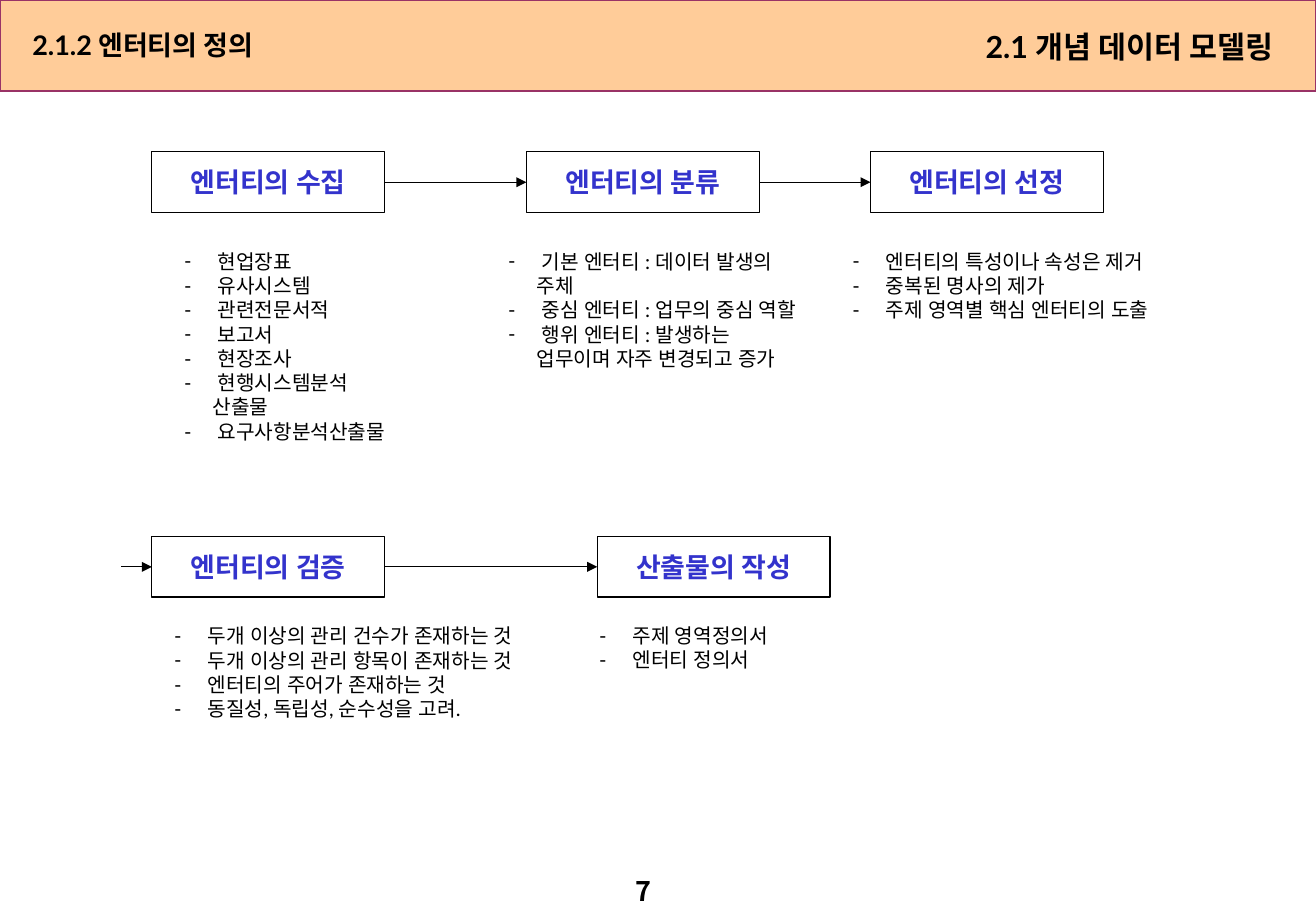
"""Build the slide on defining entities: five linked steps, each with its list."""
from dataclasses import dataclass

from lxml.etree import SubElement
from pptx import Presentation
from pptx.dml.color import RGBColor
from pptx.enum.shapes import MSO_CONNECTOR, MSO_SHAPE
from pptx.enum.text import MSO_ANCHOR, MSO_AUTO_SIZE, PP_ALIGN
from pptx.oxml.ns import qn
from pptx.util import Emu, Pt

HEADING = "2.1.2 엔터티의 정의"
CHAPTER = "2.1 개념 데이터 모델링"
PAGE_NUMBER = "7"

STEPS = [
    dict(name="엔터티의 수집", corner=(150, 150), notes_at=(170, 240, 240, 204), notes=[
        "현업장표", "유사시스템", "관련전문서적", "보고서", "현장조사",
        "현행시스템분석 산출물", "요구사항분석산출물"]),
    dict(name="엔터티의 분류", corner=(520, 150), notes_at=(490, 240, 310, 156), notes=[
        "기본 엔터티 : 데이터 발생의 주체",
        "중심 엔터티 : 업무의 중심 역할",
        "행위 엔터티 : 발생하는 업무이며 자주 변경되고 증가"]),
    dict(name="엔터티의 선정", corner=(860, 150), notes_at=(830, 240, 360, 108), notes=[
        "엔터티의 특성이나 속성은 제거", "중복된 명사의 제가",
        "주제 영역별 핵심 엔터티의 도출"]),
    dict(name="엔터티의 검증", corner=(150, 530), notes_at=(160, 610, 360, 156), notes=[
        "두개 이상의 관리 건수가 존재하는 것",
        "두개 이상의 관리 항목이 존재하는 것",
        "엔터티의 주어가 존재하는 것",
        "동질성, 독립성, 순수성을 고려."]),
    dict(name="산출물의 작성", corner=(590, 530), notes_at=(580, 610, 250, 60), notes=[
        "주제 영역정의서", "엔터티 정의서"]),
]

SLIDE_SIZE = (1300, 900)
BAND_HEIGHT = 90
STEP_SIZE = (230, 60)
ENTRY_X = 120
HANG = 28
TOP, LEFT, RIGHT = 0, 1, 3


@dataclass(frozen=True)
class Theme:
    """Colours, fonts and type sizes."""
    band: RGBColor = RGBColor(0xFF, 0xCC, 0x99)
    band_edge: RGBColor = RGBColor(0x99, 0x33, 0x66)
    ink: RGBColor = RGBColor(0, 0, 0)
    step: RGBColor = RGBColor(0x33, 0x33, 0xCC)
    face: str = "Lato"
    number_face: str = "Noto Sans CJK KR"
    note: int = 12
    label: int = 16
    chapter: int = 18
    line: float = 0.75


THEME = Theme()


def px(length):
    return Emu(length * 7620)


def place(part, box):
    for side, length in zip(("left", "top", "width", "height"), box):
        setattr(part, side, px(length))


def write(part, lines, size, color=THEME.ink, bold=True, face=THEME.face,
          align=PP_ALIGN.LEFT, anchor=MSO_ANCHOR.TOP, wrap=True, bullet=None):
    frame = part.text_frame
    frame.text = "\n".join(lines)
    frame_format = dict(word_wrap=wrap, auto_size=MSO_AUTO_SIZE.NONE, vertical_anchor=anchor)
    for key, value in frame_format.items():
        setattr(frame, key, value)
    for paragraph in frame.paragraphs:
        if bullet:
            properties = paragraph._p.get_or_add_pPr()
            properties.set("marL", str(px(HANG)))
            properties.set("indent", str(-px(HANG)))
            SubElement(properties, qn("a:buFont"), typeface=face)
            SubElement(properties, qn("a:buChar"), char=bullet)
        spacing = dict(alignment=align, space_before=Pt(0), space_after=Pt(0), line_spacing=1.0)
        for key, value in spacing.items():
            setattr(paragraph, key, value)
        for run in paragraph.runs:
            for key, value in dict(size=Pt(size), bold=bold, name=face).items():
                setattr(run.font, key, value)
            run.font.color.rgb = color
            SubElement(run._r.get_or_add_rPr(), qn("a:ea"), typeface=face)


def add_box(shapes, box, edge, fill=None):
    part = shapes.add_shape(MSO_SHAPE.RECTANGLE, *map(px, box))
    part.shadow.inherit = False
    if fill is None:
        part.fill.background()
    else:
        part.fill.solid()
        part.fill.fore_color.rgb = fill
    part.line.color.rgb = edge
    part.line.width = Pt(THEME.line)
    return part


def add_arrow(shapes, target, source=None):
    middle = target.top + target.height // 2
    arrow = shapes.add_connector(MSO_CONNECTOR.STRAIGHT, px(ENTRY_X), middle, target.left, middle)
    if source is not None:
        arrow.begin_connect(source, RIGHT)
    arrow.end_connect(target, LEFT)
    arrow.line.color.rgb = THEME.ink
    arrow.line.width = Pt(THEME.line)
    SubElement(arrow.line._get_or_add_ln(), qn("a:tailEnd"), type="triangle")
    SubElement(arrow._element.spPr, qn("a:effectLst"))


def main():
    deck = Presentation()
    deck.slide_width, deck.slide_height = map(px, SLIDE_SIZE)
    slide = deck.slides.add_slide(deck.slide_layouts[4])
    shapes = slide.shapes

    heading = shapes.title
    band = add_box(shapes, (0, 0, SLIDE_SIZE[0], BAND_HEIGHT), THEME.band_edge, THEME.band)
    heading.element.addprevious(band.element)
    place(heading, (20, 22, 620, 44))
    write(heading, [HEADING], THEME.label)
    chapter = shapes.add_textbox(*map(px, (700, 22, 570, 48)))
    write(chapter, [CHAPTER], THEME.chapter, align=PP_ALIGN.RIGHT)
    number = shapes.add_textbox(*map(px, (616, 858, 62, 44)))
    write(number, [PAGE_NUMBER], THEME.label, face=THEME.number_face, wrap=False)

    bodies = [part for part in slide.placeholders if part.placeholder_format.idx > 0]
    bodies += [shapes.add_textbox(0, 0, 0, 0) for _ in STEPS[len(bodies):]]
    previous = None
    for step, notes in zip(STEPS, bodies):
        place(notes, step["notes_at"])
        write(notes, [f" {note}" for note in step["notes"]], THEME.note, bold=False, bullet="-")
        box = add_box(shapes, step["corner"] + STEP_SIZE, THEME.ink)
        write(box, [step["name"]], THEME.label, THEME.step,
              align=PP_ALIGN.CENTER, anchor=MSO_ANCHOR.MIDDLE, wrap=False)
        if previous is not None:
            same_row = previous.top == box.top
            add_arrow(shapes, box, previous if same_row else None)
        previous = box

    deck.save("out.pptx")


if __name__ == "__main__":
    main()
